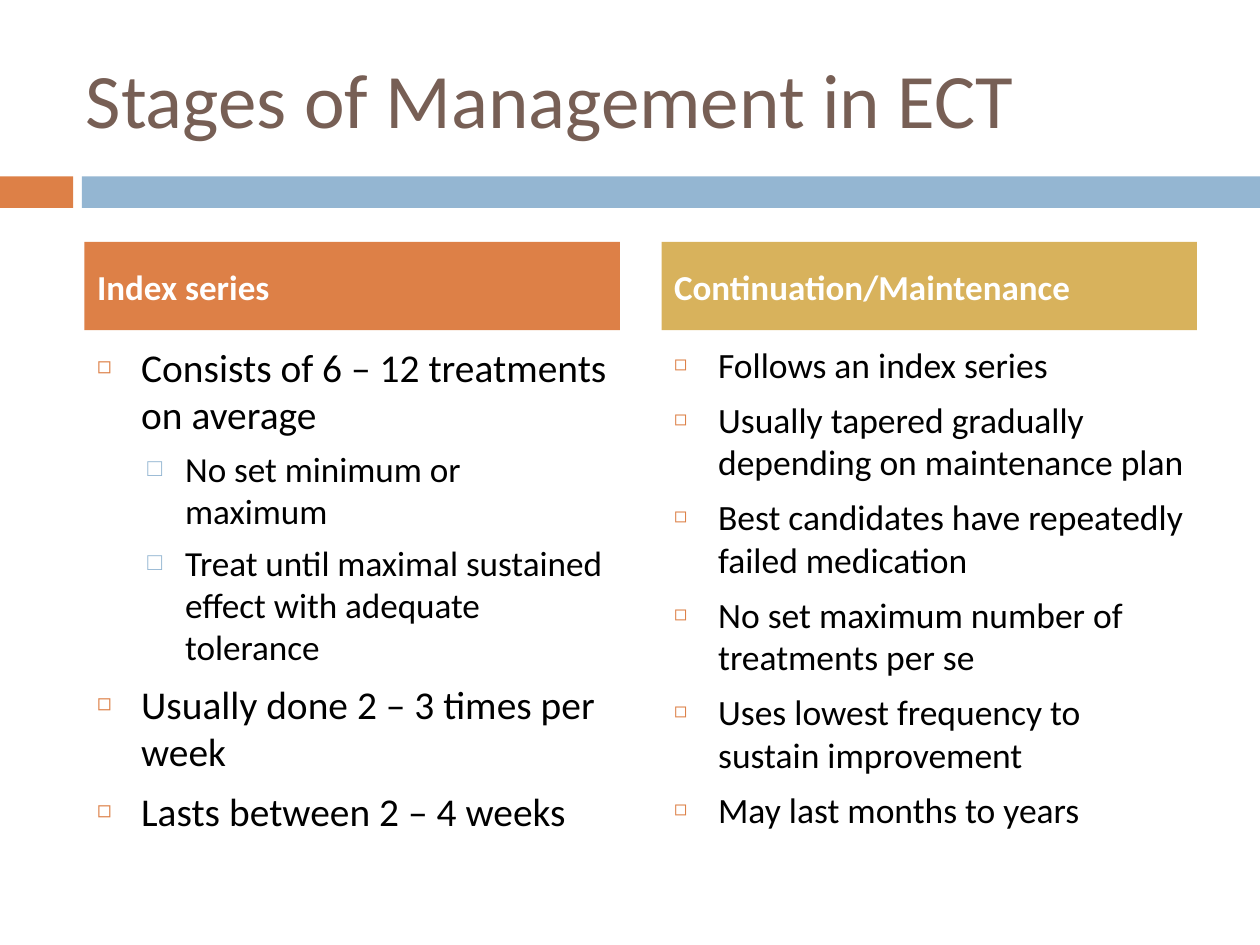
"""Build the slide on the stages of management in ECT."""
from lxml import etree
from pptx import Presentation
from pptx.dml.color import RGBColor
from pptx.enum.shapes import MSO_SHAPE
from pptx.enum.text import MSO_ANCHOR, MSO_AUTO_SIZE, PP_ALIGN
from pptx.oxml.ns import qn
from pptx.util import Inches, Pt

RECT = MSO_SHAPE.RECTANGLE
TOP, MIDDLE = MSO_ANCHOR.TOP, MSO_ANCHOR.MIDDLE
LEFT = PP_ALIGN.LEFT
FIXED = MSO_AUTO_SIZE.NONE

HUES = {"title": "775F55", "orange": "DD8047", "blue": "94B6D2",
        "gold": "D8B25C", "text": "000000", "white": "FFFFFF"}
WIDE, HIGH = 10, 7.5
EDGE, COL, GAP = 0.67, 4.25, 0.33
HEAD_TOP, HEAD_HIGH = 1.92, 0.7
LIST_TOP, LIST_HIGH = 2.67, 3.92

# level: indent, hang, space before, bullet, bullet hue, bullet percent
LEVELS = [(0.35, 0.35, 7, "◻", "orange", 60),
          (0.7, 0.3, 5.5, "□", "blue", 70)]
COLUMNS = [
    ("Index series", "orange", (22.5, 20.1), [
        (0, "Consists of 6 – 12 treatments on average"),
        (1, "No set minimum or maximum"),
        (1, "Treat until maximal sustained effect with adequate tolerance"),
        (0, "Usually done 2 – 3 times per week"),
        (0, "Lasts between 2 – 4 weeks")]),
    ("Continuation/Maintenance", "gold", (20.3,), [
        (0, "Follows an index series"),
        (0, "Usually tapered gradually depending on maintenance plan"),
        (0, "Best candidates have repeatedly failed medication"),
        (0, "No set maximum number of treatments per se"),
        (0, "Uses lowest frequency to sustain improvement"),
        (0, "May last months to years")]),
]


def place(shape, box, anchor):
    shape.left, shape.top, shape.width, shape.height = map(Inches, box)
    frame = shape.text_frame
    frame.word_wrap = True
    frame.auto_size = FIXED
    frame.vertical_anchor = anchor
    return frame


def write(para, text, size, hue, bold=False):
    para.alignment = LEFT
    run = para.add_run()
    run.text = text
    run.font.name = "Calibri"
    run.font.size = Pt(size)
    run.font.bold = bold
    run.font.color.rgb = RGBColor.from_string(HUES[hue])


deck = Presentation()
deck.slide_width, deck.slide_height = Inches(WIDE), Inches(HIGH)
slide = deck.slides.add_slide(deck.slide_layouts.get_by_name("Comparison"))
holders = slide.placeholders

for left, width, hue in [(0, 0.58, "orange"), (0.65, WIDE - 0.65, "blue")]:
    bar = slide.shapes.add_shape(
        RECT, Inches(left), Inches(1.4), Inches(width), Inches(0.25))
    bar.shadow.inherit = False
    bar.fill.solid()
    bar.fill.fore_color.rgb = RGBColor.from_string(HUES[hue])
    bar.line.fill.background()

frame = place(slide.shapes.title, (0.58, 0.3, 8.92, 0.95), MIDDLE)
write(frame.paragraphs[0], "Stages of Management in ECT", 44, "title")

for col, (head, fill, sizes, items) in enumerate(COLUMNS):
    left = EDGE + col * (COL + GAP)
    label, body = holders[1 + 2 * col], holders[2 + 2 * col]

    frame = place(label, (left, HEAD_TOP, COL, HEAD_HIGH), MIDDLE)
    label.fill.solid()
    label.fill.fore_color.rgb = RGBColor.from_string(HUES[fill])
    frame.paragraphs[0].space_before = Pt(7)
    write(frame.paragraphs[0], head, 20, "white", True)

    frame = place(body, (left, LIST_TOP, COL, LIST_HIGH), TOP)
    for row, (level, text) in enumerate(items):
        para = frame.add_paragraph() if row else frame.paragraphs[0]
        indent, hang, space, mark, hue, share = LEVELS[level]
        para.level = level
        para.space_before = Pt(space)
        write(para, text, sizes[level], "text")
        props = para._p.get_or_add_pPr()
        props.set("marL", str(Inches(indent)))
        props.set("indent", str(-Inches(hang)))
        color = etree.SubElement(props, qn("a:buClr"))
        etree.SubElement(color, qn("a:srgbClr"), val=HUES[hue])
        etree.SubElement(props, qn("a:buSzPct"), val=str(share * 1000))
        etree.SubElement(props, qn("a:buChar"), char=mark)

deck.save("out.pptx")
